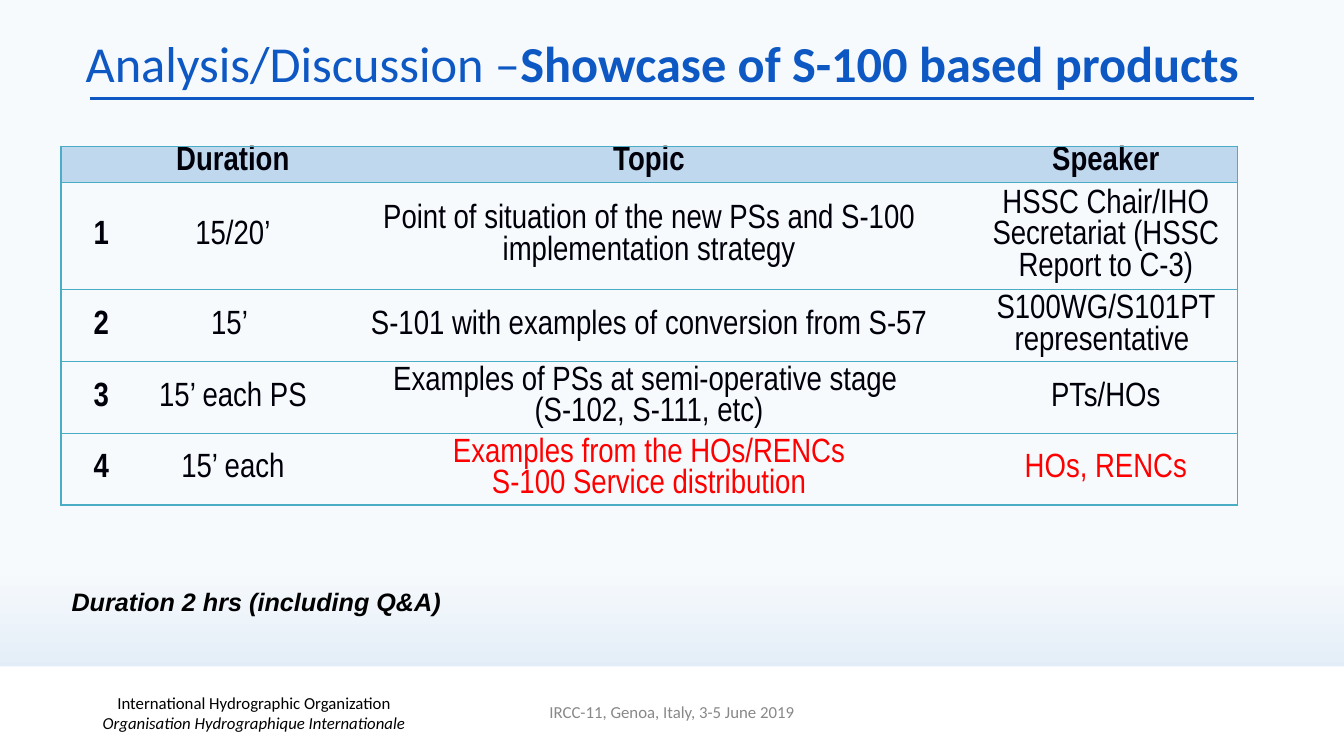
"""Build the agenda slide for the showcase of S-100 based products."""
from lxml import etree
from pptx import Presentation
from pptx.dml.color import RGBColor
from pptx.enum.shapes import MSO_CONNECTOR, MSO_SHAPE
from pptx.enum.text import MSO_ANCHOR, PP_ALIGN
from pptx.oxml.ns import qn
from pptx.util import Pt

LEFT, CENTER = PP_ALIGN.LEFT, PP_ALIGN.CENTER
TOP, MIDDLE = MSO_ANCHOR.TOP, MSO_ANCHOR.MIDDLE
COLORS = {
    "sky": "F7FAFD", "horizon": "D0E2F1", "blue": "0E58C4", "white": "FFFFFF",
    "black": "000000", "gray": "888888", "header": "C0D8ED", "border": "4BACC6",
    "ink": "00000A", "red": "FF0000",
}


def rgb(name):
    """Return the named colour."""
    return RGBColor.from_string(COLORS[name])


def write(paragraph, runs, align, spacing, color, **formats):
    """Write (text, extra formats) runs, with a line break for each newline."""
    paragraph.alignment = align
    paragraph.line_spacing = spacing
    for text, extra in runs:
        if text == "\n":
            paragraph.add_line_break()
            continue
        run = paragraph.add_run()
        run.text = text
        run.font.color.rgb = rgb(color)
        for attribute, value in {**formats, **extra}.items():
            setattr(run.font, attribute, value)


presentation = Presentation()
presentation.slide_width, presentation.slide_height = Pt(960), Pt(540)
slide = presentation.slides.add_slide(presentation.slide_layouts[6])

background = slide.background.fill
background.gradient()
background.gradient_angle = 270
for stop, position, color in zip(background.gradient_stops, (0.75, 1), ("sky", "horizon")):
    stop.position = position
    stop.color.rgb = rgb(color)

title_rule = slide.shapes.add_connector(MSO_CONNECTOR.STRAIGHT, Pt(64), Pt(70.5), Pt(896), Pt(70.5))
title_rule.line.color.rgb = rgb("blue")
title_rule.line.width = Pt(2.25)
etree.SubElement(title_rule._element.spPr, qn("a:effectLst"))

footer_band = slide.shapes.add_shape(MSO_SHAPE.RECTANGLE, 0, Pt(476), Pt(960), Pt(64))
footer_band.shadow.inherit = False
footer_band.fill.solid()
footer_band.fill.fore_color.rgb = rgb("white")
footer_band.line.fill.background()

TEXTS = [
    ((19.5, 491.6, 324, 35.3), MIDDLE, (3.6, 3.6), CENTER, 1, "black",
     {"name": "Calibri", "size": Pt(12)},
     [("International Hydrographic Organization", {}), ("\n", {}),
      ("Organisation Hydrographique Internationale", {"italic": True})]),
    ((318, 497.5, 324, 21.6), MIDDLE, (3.6, 3.6), CENTER, 1, "gray",
     {"name": "Calibri", "size": Pt(12)},
     [("IRCC-11, Genoa, Italy, 3-5 June 2019", {})]),
    ((57.6, 22.2, 848, 50.4), MIDDLE, (3.6, 3.6), LEFT, 0.9, "blue",
     {"name": "Calibri", "size": Pt(36)},
     [("Analysis/Discussion –", {}), ("Showcase of S-100 based products", {"bold": True})]),
    ((44, 415.5, 325.5, 28.8), TOP, (7.2, 3.6), LEFT, 1, "black",
     {"name": "Arial", "size": Pt(18), "bold": True, "italic": True},
     [("Duration 2 hrs (including Q&A)", {})]),
]
for place, anchor, (side, end), align, spacing, color, formats, runs in TEXTS:
    frame = slide.shapes.add_textbox(*map(Pt, place)).text_frame
    frame.word_wrap = True
    frame.vertical_anchor = anchor
    frame.margin_left = frame.margin_right = Pt(side)
    frame.margin_top = frame.margin_bottom = Pt(end)
    write(frame.paragraphs[0], runs, align, spacing, color, **formats)

AGENDA = [
    ("", "Duration", "Topic", "Speaker"),
    ("1", "15/20’", "Point of situation of the new PSs and S-100 implementation strategy",
     "HSSC Chair/IHO Secretariat (HSSC Report to C-3)"),
    ("2", "15’ ", "S-101 with examples of conversion from S-57", "S100WG/S101PT representative "),
    ("3", "15’ each PS", "Examples of PSs at semi-operative stage \n(S-102, S-111, etc)", "PTs/HOs"),
    ("4", "15’ each", "Examples from the HOs/RENCs\nS-100 Service distribution", "HOs, RENCs"),
]
WIDTHS = (57.6, 130.3, 464.1, 188.6)
HEIGHTS = (25.7, 77, 51.2, 51.2, 51.2)

table = slide.shapes.add_table(
    len(HEIGHTS), len(WIDTHS), Pt(43.6), Pt(104.4), Pt(sum(WIDTHS)), Pt(sum(HEIGHTS))).table
table.first_row = table.horz_banding = False
for column, width in zip(table.columns, WIDTHS):
    column.width = Pt(width)

for i, (height, entries) in enumerate(zip(HEIGHTS, AGENDA)):
    table.rows[i].height = Pt(height)
    for j, entry in enumerate(entries):
        cell = table.cell(i, j)
        cell.vertical_anchor = MIDDLE if i else TOP
        cell.margin_left = cell.margin_right = Pt(5)
        cell.margin_top = cell.margin_bottom = 0
        borders = {"lnL": j == 0, "lnR": j == len(WIDTHS) - 1, "lnT": True, "lnB": True}
        for tag, visible in borders.items():
            border = etree.SubElement(cell._tc.get_or_add_tcPr(), qn(f"a:{tag}"), w=str(Pt(1)))
            if visible:
                fill = etree.SubElement(border, qn("a:solidFill"))
                etree.SubElement(fill, qn("a:srgbClr"), val=COLORS["border"])
            else:
                etree.SubElement(border, qn("a:noFill"))
        if i:
            cell.fill.background()
        else:
            cell.fill.solid()
            cell.fill.fore_color.rgb = rgb("header")
        color = "red" if i == 4 and j >= 2 else "ink"
        for k, line in enumerate(entry.split("\n")):
            paragraph = cell.text_frame.add_paragraph() if k else cell.text_frame.paragraphs[0]
            write(paragraph, [(line, {})] if line else [], CENTER, Pt(22.5), color,
                  name="Arial Narrow", size=Pt(24), bold=i == 0 or j == 0)

presentation.save("out.pptx")
